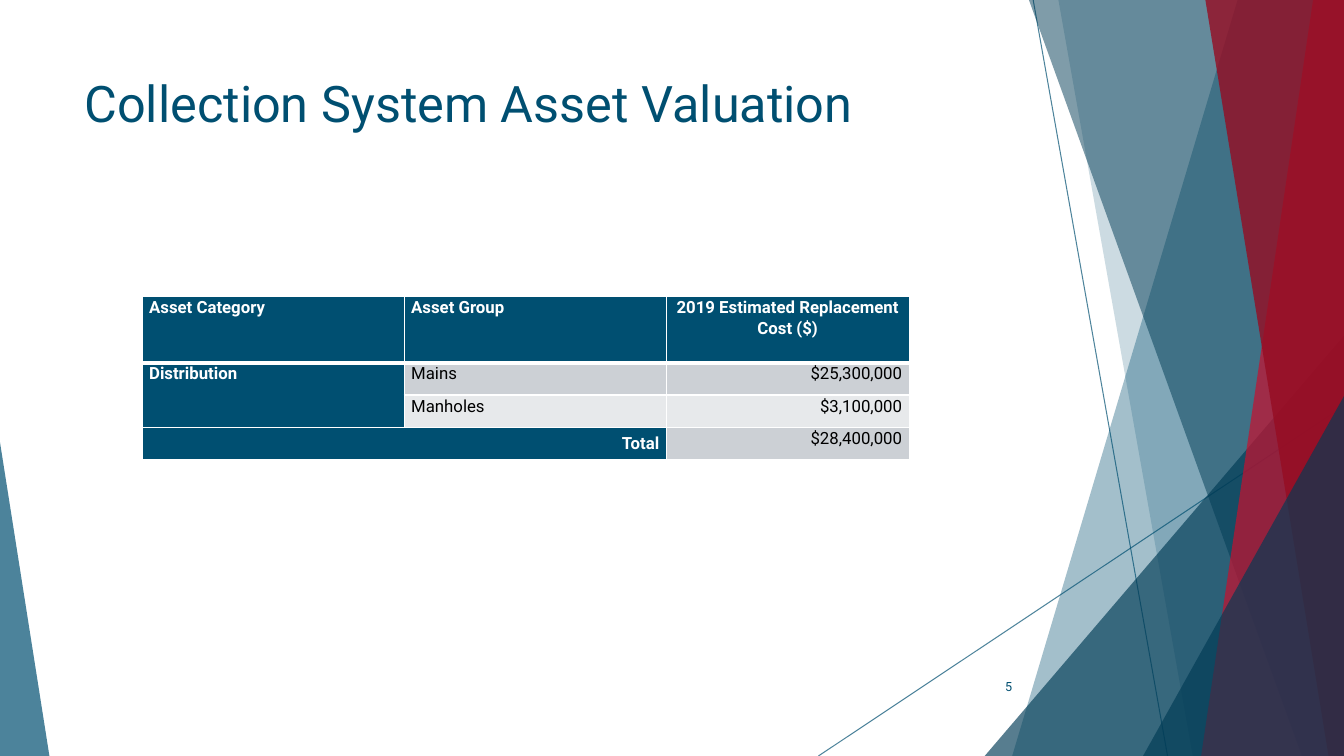
from lxml import etree
from pptx import Presentation
from pptx.dml.color import RGBColor
from pptx.enum import shapes, text
from pptx.oxml import ns
from pptx.util import Pt

BLUE = RGBColor(0x00, 0x4F, 0x71)
NAVY = RGBColor(0x00, 0x3B, 0x55)
RED = RGBColor(0xC8, 0x10, 0x2E)
CRIMSON = RGBColor(0x96, 0x0C, 0x22)
WHITE = RGBColor(0xFF, 0xFF, 0xFF)
BLACK = RGBColor(0x00, 0x00, 0x00)
BAND = RGBColor(0xCC, 0xD0, 0xD5)
PALE = RGBColor(0xE7, 0xE9, 0xEB)
FONT = "Roboto"
W, H = 960, 540
LEFT, CENTER, RIGHT = text.PP_ALIGN.LEFT, text.PP_ALIGN.CENTER, text.PP_ALIGN.RIGHT


def set_alpha(fill, color, percent):
    fill.solid()
    fill.fore_color.rgb = color
    clr = fill._xPr.find(ns.qn("a:solidFill"))[0]
    etree.SubElement(clr, ns.qn("a:alpha"), val=str(percent * 1000))


def paint(sp, color, percent):
    sp.shadow.inherit = False
    sp.line.fill.background()
    set_alpha(sp.fill, color, percent)


def add_ray(s, x1, y1, x2, y2):
    ln = s.shapes.add_connector(
        shapes.MSO_CONNECTOR.STRAIGHT, Pt(x1), Pt(y1), Pt(x2), Pt(y2))
    ln.line.width = Pt(0.75)
    set_alpha(ln.line.fill, BLUE, 70)
    etree.SubElement(ln._element.spPr, ns.qn("a:effectLst"))


def add_blade(s, right, bottom, top_x, bottom_x, color, percent):
    fb = s.shapes.build_freeform(top_x, 0, scale=12700)
    fb.add_line_segments([(right, 0), (right, bottom), (bottom_x, bottom)])
    paint(fb.convert_to_shape(), color, percent)


def add_wedge(s, x, bottom, w, h, apex, color, percent):
    sp = s.shapes.add_shape(shapes.MSO_SHAPE.ISOSCELES_TRIANGLE,
                            Pt(x), Pt(bottom - h), Pt(w), Pt(h))
    sp.adjustments[0] = apex
    paint(sp, color, percent)


def add_backdrop(s, w, h):
    add_ray(s, 738, 0, 834, h)
    add_ray(s, w, 290, 584.6, h)
    add_blade(s, w, h, 884.2, 722.9, BLUE, 36)
    add_blade(s, w, h, 756, 851.8, BLUE, 20)
    add_wedge(s, 703.4, h, w - 703.4, 300.2, 1, NAVY, 66)
    add_blade(s, w, h, 735.1, 929.5, NAVY, 50)
    add_blade(s, w, h, 938.2, 858.2, RED, 70)
    add_blade(s, w, h, 861.1, 949, CRIMSON, 80)
    add_wedge(s, 816.5, h, w - 816.5, 257, 1, NAVY, 66)
    add_wedge(s, 0, h, 35.3, 224, 0, BLUE, 70)


def style(p, size, color, bold=False, align=LEFT):
    p.alignment = align
    for r in p.runs:
        r.font.name, r.font.size = FONT, Pt(size)
        r.font.bold, r.font.color.rgb = bold, color


def add_label(s, x, y, w, h, words, size, align, anchor):
    tf = s.shapes.add_textbox(Pt(x), Pt(y), Pt(w), Pt(h)).text_frame
    tf.word_wrap = True
    tf.vertical_anchor = anchor
    tf.text = words
    style(tf.paragraphs[0], size, BLUE, align=align)


def set_borders(cell, top, bottom):
    tcPr = cell._tc.get_or_add_tcPr()
    widths = {"lnL": 1, "lnR": 1, "lnT": top, "lnB": bottom}
    for i, (tag, width) in enumerate(widths.items()):
        ln = etree.Element(ns.qn("a:" + tag), w=str(Pt(width)))
        fill = etree.SubElement(ln, ns.qn("a:solidFill"))
        etree.SubElement(fill, ns.qn("a:srgbClr"), val=str(WHITE))
        tcPr.insert(i, ln)


def add_valuation(s, x, y):
    rows = [
        ["Asset Category", "Asset Group", "2019 Estimated Replacement Cost ($)"],
        ["Distribution", "Mains", "$25,300,000"],
        ["", "Manholes", "$3,100,000"],
        ["Total", "", "$28,400,000"],
    ]
    widths, heights = [187.2, 187.2, 173.5], [47.5, 23, 23, 23]
    last = len(rows) - 1
    tbl = s.shapes.add_table(len(rows), len(widths), Pt(x), Pt(y),
                             Pt(sum(widths)), Pt(sum(heights))).table
    for col, w in zip(tbl.columns, widths):
        col.width = Pt(w)
    for row, h in zip(tbl.rows, heights):
        row.height = Pt(h)
    tbl.cell(1, 0).merge(tbl.cell(2, 0))
    tbl.cell(last, 0).merge(tbl.cell(last, 1))
    for i, row in enumerate(rows):
        for j, words in enumerate(row):
            cell = tbl.cell(i, j)
            heading = i == 0 or j == 0 or (i == last and j == 1)
            cell.fill.solid()
            cell.fill.fore_color.rgb = BLUE if heading else BAND if i % 2 else PALE
            set_borders(cell, 3 if i == 1 else 1, 3 if i == 0 else 1)
            cell.margin_left = cell.margin_right = Pt(5)
            cell.margin_top = cell.margin_bottom = Pt(0)
            if not words:
                continue
            cell.text = words
            p = cell.text_frame.paragraphs[0]
            p.line_spacing = 1.07
            align = CENTER if i == 0 and j == 2 else RIGHT if i == last or j == 2 else LEFT
            style(p, 12, WHITE if heading else BLACK, heading, align)
    tbl.cell(last, 0).vertical_anchor = text.MSO_ANCHOR.MIDDLE


def main():
    prs = Presentation()
    prs.slide_width, prs.slide_height = Pt(W), Pt(H)
    s = prs.slides.add_slide(prs.slide_layouts[6])
    add_backdrop(s, W, H)
    add_label(s, 53.3, 48.2, 676.8, 103.7, "Collection System Asset Valuation",
              36, LEFT, text.MSO_ANCHOR.TOP)
    add_valuation(s, 101.5, 211.7)
    add_label(s, 676, 476, 54, 28.8, "5", 9, RIGHT, text.MSO_ANCHOR.MIDDLE)
    prs.save("out.pptx")


if __name__ == "__main__":
    main()
